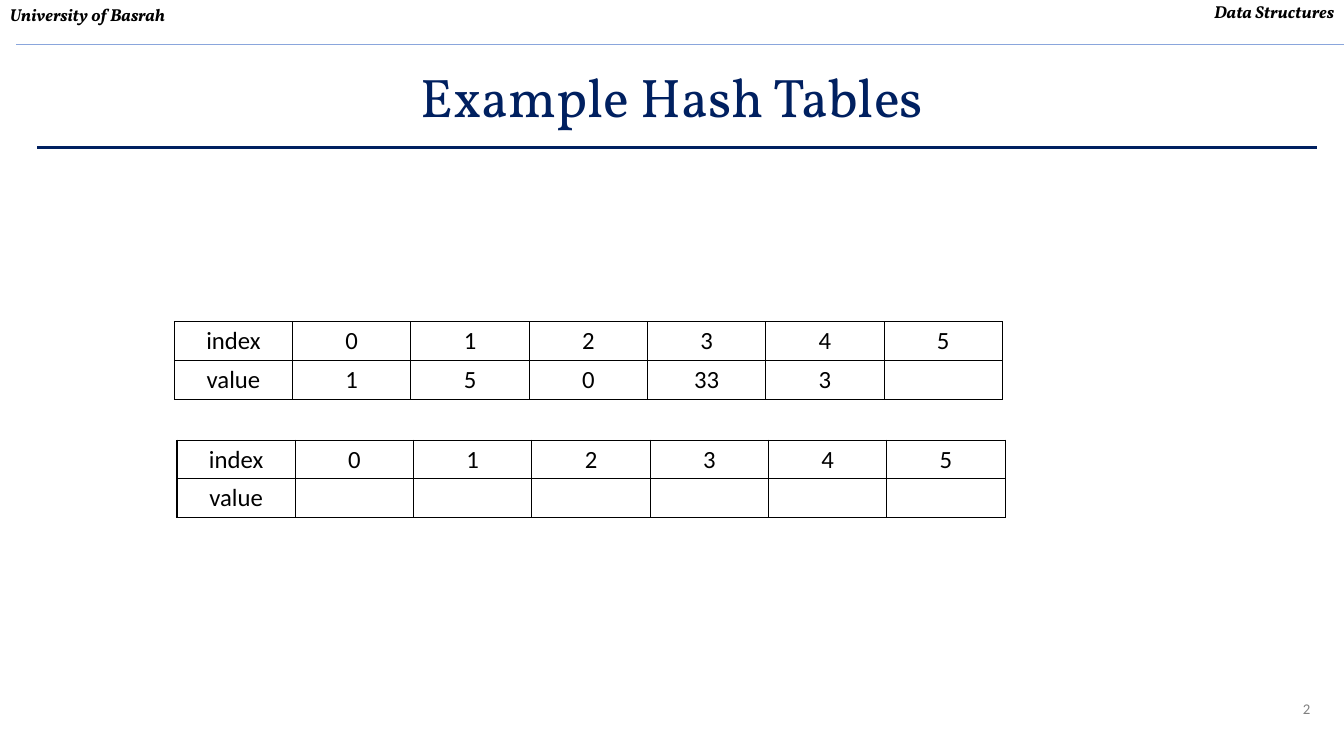
from lxml.etree import SubElement
from pptx import Presentation
from pptx.dml.color import RGBColor
from pptx.enum.shapes import MSO_CONNECTOR
from pptx.enum.text import MSO_ANCHOR, PP_ALIGN
from pptx.oxml.ns import qn
from pptx.util import Inches, Pt

COLORS = {"ink": "000000", "navy": "002060", "rule": "8AA6DC", "number": "808080"}
HEADER = {"name": "Vollkorn", "size": Pt(14), "bold": True, "italic": True}
TITLE = {"name": "Vollkorn", "size": Pt(44)}
NUMBER = {"name": "Calibri", "size": Pt(12)}
CELL = {"name": "Calibri", "size": Pt(20)}
COLUMN_WIDTH, ROW_HEIGHT = 1.33, 0.41
INDEX_ROW = ["index", *map(str, range(6))]
FILLED_ROW = ["value", "1", "5", "0", "33", "3", ""]
EMPTY_ROW = ["value"] + [""] * 6


def write(paragraph, text, font_format, color, align):
    """Put formatted text into a paragraph."""
    paragraph.alignment = align
    if not text:
        return
    run = paragraph.add_run()
    run.text = text
    for attribute, value in font_format.items():
        setattr(run.font, attribute, value)
    run.font.color.rgb = RGBColor.from_string(COLORS[color])


def add_label(slide, box, text, font_format, color, align, anchor=MSO_ANCHOR.TOP):
    """Add a wrapped text box holding one line."""
    frame = slide.shapes.add_textbox(*map(Inches, box)).text_frame
    frame.word_wrap = True
    frame.vertical_anchor = anchor
    write(frame.paragraphs[0], text, font_format, color, align)


def add_rule(slide, left, right, y, color, width):
    """Add a horizontal line without a shadow."""
    rule = slide.shapes.add_connector(
        MSO_CONNECTOR.STRAIGHT, Inches(left), Inches(y), Inches(right), Inches(y))
    rule.line.color.rgb = RGBColor.from_string(COLORS[color])
    rule.line.width = Pt(width)
    SubElement(rule.element.spPr, qn("a:effectLst"))


def add_borders(cell):
    """Draw a thin border on all four sides of a cell."""
    properties = cell._tc.get_or_add_tcPr()
    for side in ("lnL", "lnR", "lnT", "lnB"):
        border = SubElement(properties, qn(f"a:{side}"), w=str(Pt(1)))
        fill = SubElement(border, qn("a:solidFill"))
        SubElement(fill, qn("a:srgbClr"), val=COLORS["ink"])


def add_hash_table(slide, left, top, rows):
    """Add a bordered table of indexes and values."""
    columns = len(rows[0])
    table = slide.shapes.add_table(
        len(rows), columns, Inches(left), Inches(top),
        Inches(COLUMN_WIDTH * columns), Inches(ROW_HEIGHT * len(rows))).table
    table.first_row = table.horz_banding = False
    for column in table.columns:
        column.width = Inches(COLUMN_WIDTH)
    for row, texts in enumerate(rows):
        for column, text in enumerate(texts):
            cell = table.cell(row, column)
            add_borders(cell)
            cell.fill.background()
            write(cell.text_frame.paragraphs[0], text, CELL, "ink", PP_ALIGN.CENTER)


def main():
    """Build the hash table slide."""
    presentation = Presentation()
    presentation.slide_width, presentation.slide_height = Inches(15.11), Inches(8.5)
    slide = presentation.slides.add_slide(presentation.slide_layouts[6])

    add_label(slide, (13.16, 7.82, 1.67, 0.7), "2", NUMBER, "number", PP_ALIGN.RIGHT)
    add_label(slide, (0, -0.03, 15.1, 0.34), "Data Structures", HEADER, "ink", PP_ALIGN.RIGHT)
    add_rule(slide, 0.18, 15.11, 0.5, "rule", 1.5)
    add_rule(slide, 0.42, 14.81, 1.66, "navy", 2)
    add_label(slide, (0.01, 0, 7.85, 0.34), "University of Basrah", HEADER, "ink", PP_ALIGN.LEFT)
    add_label(slide, (0, 0.5, 15.11, 1.15), "Example Hash Tables", TITLE, "navy",
              PP_ALIGN.CENTER, MSO_ANCHOR.MIDDLE)
    add_hash_table(slide, 1.96, 3.62, [INDEX_ROW, FILLED_ROW])
    add_hash_table(slide, 1.99, 4.95, [INDEX_ROW, EMPTY_ROW])
    presentation.save("out.pptx")


if __name__ == "__main__":
    main()
